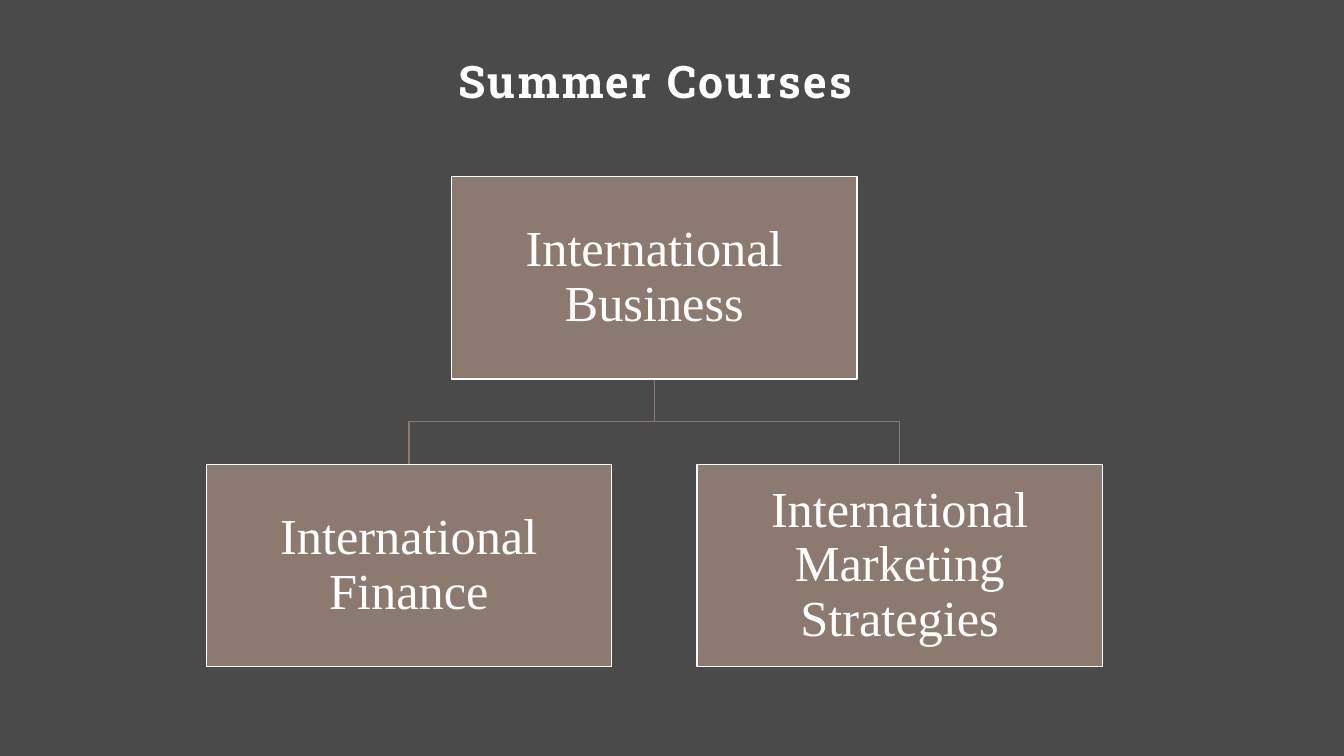
"""Build the Summer Courses slide with a two-level course hierarchy."""
from dataclasses import dataclass

from pptx import Presentation
from pptx.dml.color import RGBColor
from pptx.enum.shapes import MSO_SHAPE
from pptx.enum.text import MSO_ANCHOR, MSO_AUTO_SIZE, PP_ALIGN
from pptx.shapes.autoshape import Shape
from pptx.slide import Slide
from pptx.util import Cm, Pt


@dataclass(frozen=True)
class Theme:
    background: RGBColor = RGBColor(0x4A, 0x4A, 0x4A)
    accent: RGBColor = RGBColor(0x8C, 0x7A, 0x70)
    light: RGBColor = RGBColor(0xFF, 0xFF, 0xFF)
    title_font: str = "Roboto Slab"
    body_font: str = "Times New Roman"
    title_size: float = 32
    body_size: float = 36
    line_width: float = 1


@dataclass(frozen=True)
class Course:
    name: str
    center: float
    top: float


THEME = Theme()
BOX_WIDTH, BOX_HEIGHT = 10.21, 5.1
CENTER, SIBLING_STEP = 16.49, 12.37
PARENT_TOP, CHILD_TOP = 4.45, 11.7

PARENT = Course("International Business", CENTER, PARENT_TOP)
CHILDREN = [
    Course(name, CENTER + (index - 0.5) * SIBLING_STEP, CHILD_TOP)
    for index, name in enumerate(["International Finance", "International Marketing Strategies"])
]


def write_text(shape: Shape, text: str, *, font: str, size: float, bold: bool = False,
               line_spacing: float = 1.0, inset: float = 0, tracking: float = 0,
               anchor: MSO_ANCHOR = MSO_ANCHOR.MIDDLE) -> None:
    frame = shape.text_frame
    frame.auto_size = MSO_AUTO_SIZE.NONE
    frame.word_wrap = True
    frame.vertical_anchor = anchor
    frame.margin_left = frame.margin_right = Cm(inset)
    frame.margin_top = frame.margin_bottom = Cm(inset)
    paragraph = frame.paragraphs[0]
    paragraph.alignment = PP_ALIGN.CENTER
    paragraph.line_spacing = line_spacing
    paragraph.space_before = Pt(0)
    run = paragraph.add_run()
    run.text = text
    run.font.name = font
    run.font.size = Pt(size)
    run.font.bold = bold
    run.font.color.rgb = THEME.light
    if tracking:
        run._r.get_or_add_rPr().set("spc", str(round(tracking * 100)))


def outline(shape: Shape, color: RGBColor) -> None:
    shape.shadow.inherit = False
    shape.line.color.rgb = color
    shape.line.width = Pt(THEME.line_width)


def draw_title(slide: Slide, text: str) -> None:
    title = slide.shapes.title
    title.left, title.top, title.width, title.height = Cm(10.11), Cm(1.09), Cm(12.8), Cm(2)
    write_text(title, text, font=THEME.title_font, size=THEME.title_size, bold=True,
               line_spacing=1.2, tracking=1.7, anchor=MSO_ANCHOR.TOP)


def draw_branch(slide: Slide, parent: Course, child: Course) -> None:
    start = parent.top + BOX_HEIGHT
    middle = (start + child.top) / 2
    builder = slide.shapes.build_freeform(Cm(parent.center), Cm(start))
    corners = [(parent.center, middle), (child.center, middle), (child.center, child.top)]
    builder.add_line_segments([(Cm(x), Cm(y)) for x, y in corners], close=False)
    branch = builder.convert_to_shape()
    branch.fill.background()
    outline(branch, THEME.accent)


def draw_course(slide: Slide, course: Course) -> None:
    box = slide.shapes.add_shape(MSO_SHAPE.RECTANGLE, Cm(course.center - BOX_WIDTH / 2),
                                 Cm(course.top), Cm(BOX_WIDTH), Cm(BOX_HEIGHT))
    box.fill.solid()
    box.fill.fore_color.rgb = THEME.accent
    outline(box, THEME.light)
    write_text(box, course.name, font=THEME.body_font, size=THEME.body_size,
               line_spacing=0.9, inset=0.08)


def main() -> None:
    presentation = Presentation()
    presentation.slide_width, presentation.slide_height = Cm(33.87), Cm(19.05)
    slide = presentation.slides.add_slide(presentation.slide_layouts[5])
    slide.background.fill.solid()
    slide.background.fill.fore_color.rgb = THEME.background
    draw_title(slide, "Summer Courses")
    for child in CHILDREN:
        draw_branch(slide, PARENT, child)
    for course in [PARENT, *CHILDREN]:
        draw_course(slide, course)
    presentation.save("out.pptx")


if __name__ == "__main__":
    main()
